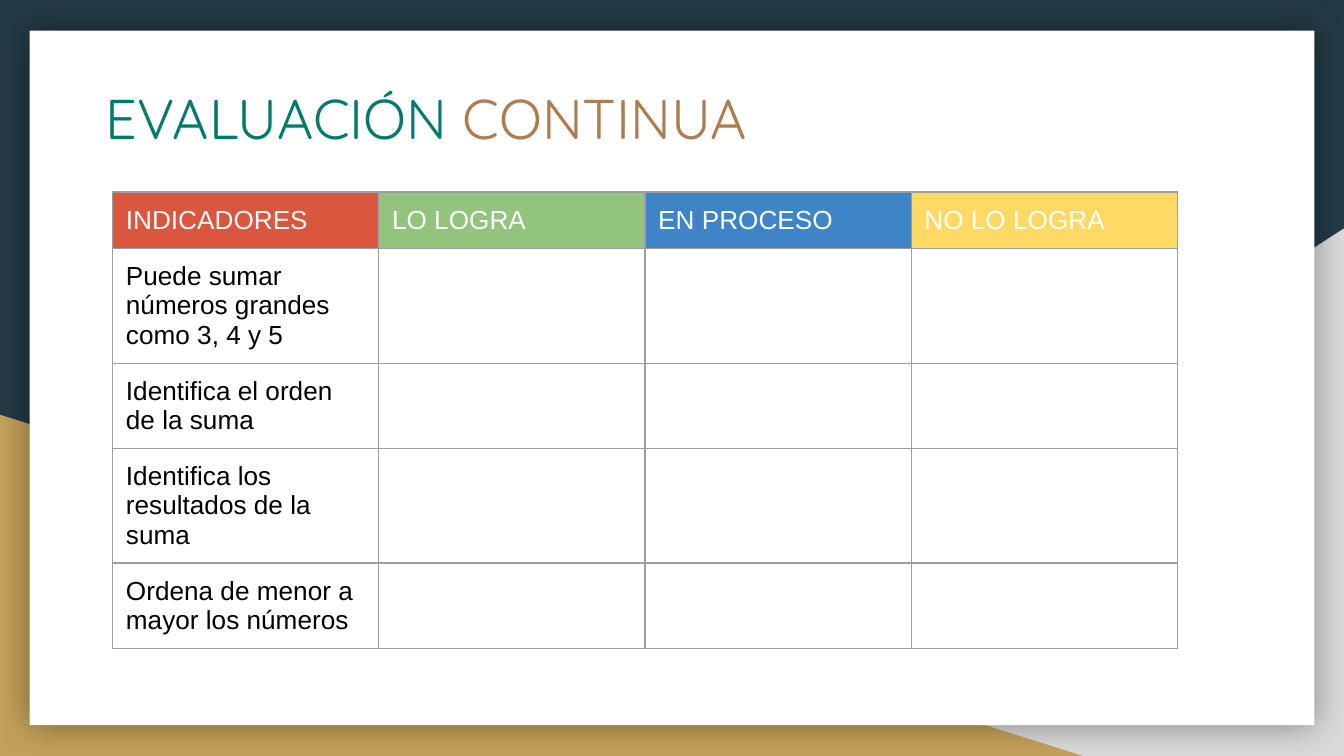
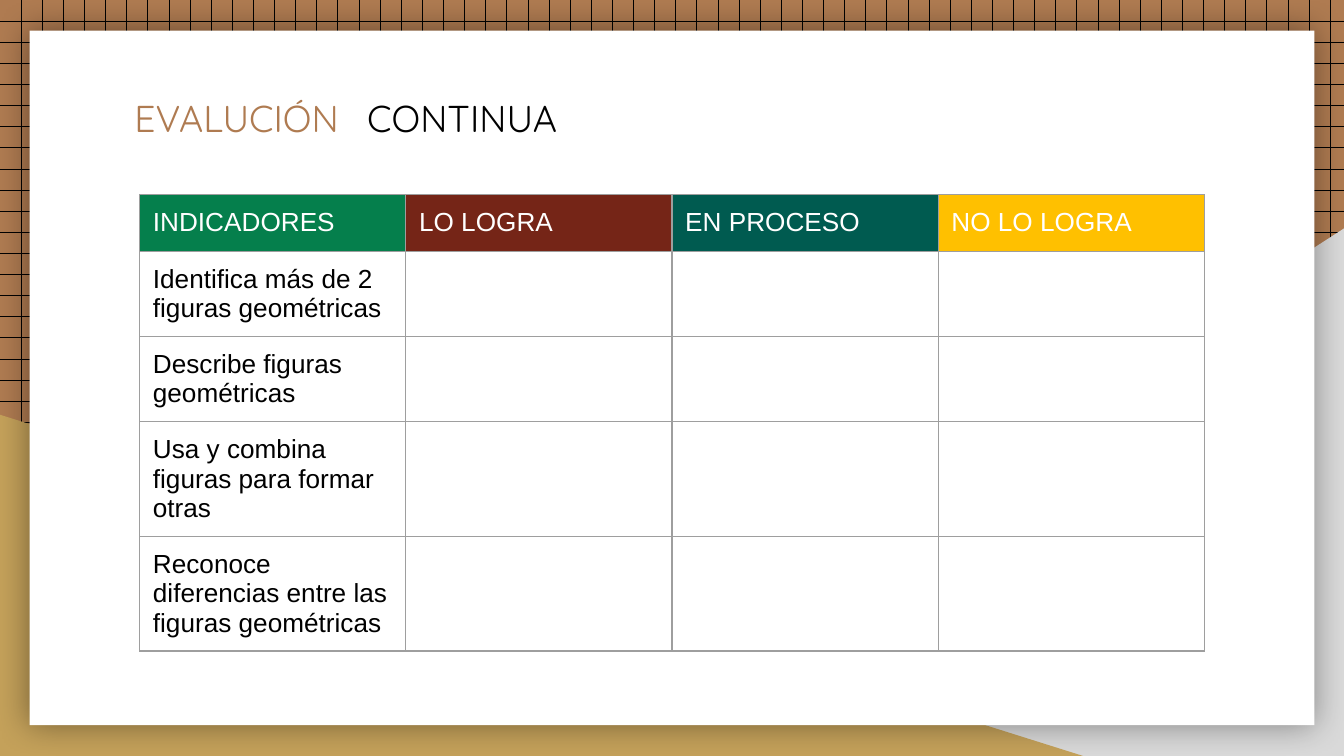
"""Builds two continuous-assessment rubric slides on a shared layered backdrop."""
from dataclasses import dataclass

from lxml.etree import SubElement
from pptx import Presentation
from pptx.dml.color import RGBColor
from pptx.enum.dml import MSO_PATTERN
from pptx.enum.shapes import MSO_SHAPE as Shape
from pptx.enum.text import MSO_ANCHOR as Anchor
from pptx.enum.text import MSO_AUTO_SIZE as AutoSize
from pptx.enum.text import PP_ALIGN as Align
from pptx.oxml import parse_xml
from pptx.oxml.ns import nsdecls, qn
from pptx.util import Cm, Pt


@dataclass(frozen=True)
class Theme:
    night: str = "233A44"
    clay: str = "AF7B51"
    teal: str = "00796B"
    sand: str = "C4A15A"
    mist: str = "D9D9D9"
    paper: str = "FFFFFF"
    ink: str = "000000"
    rule: str = "9E9E9E"
    first_header: tuple = ("D9563F", "93C47D", "3D85C6", "FFD966")
    second_header: tuple = ("057F4C", "752517", "005B50", "FFC000")
    title_font: str = "Quicksand"
    table_font: str = "Arial"
    large_title: int = 30
    small_title: int = 20
    table_size: int = 14
    rule_width: float = 0.75
    inset: float = 0.25


LEVELS = ("INDICADORES", "LO LOGRA", "EN PROCESO", "NO LO LOGRA")


def apply(target, formats):
    for name, value in formats.items():
        setattr(target, name, value)


def paint(fill, color):
    fill.solid()
    fill.fore_color.rgb = RGBColor.from_string(color)


class Deck:
    def __init__(self, theme):
        self.theme = theme
        self.presentation = Presentation()
        apply(self.presentation, {"slide_width": Cm(25.4), "slide_height": Cm(14.29)})
        self.layout = self.presentation.slide_layouts[5]
        self.slide = None
        edge = Cm(theme.inset)
        self.insets = {f"margin_{side}": edge for side in ("left", "top", "right", "bottom")}

    def new_slide(self):
        self.slide = self.presentation.slides.add_slide(self.layout)
        return self.slide.background.fill

    def block(self, kind, box, color):
        block = self.slide.shapes.add_shape(kind, *map(Cm, box))
        block.shadow.inherit = False
        paint(block.fill, color)
        block.line.fill.background()
        return block

    def backdrop(self):
        theme = self.theme
        right_hill = self.block(Shape.RIGHT_TRIANGLE, (9.96, 4.32, 15.44, 9.97), theme.mist)
        right_hill._element.spPr.xfrm.set("flipH", "1")
        left_hill = self.block(Shape.RIGHT_TRIANGLE, (0, 7.84, 20.47, 6.45), theme.sand)
        sheet = self.block(Shape.RECTANGLE, (0.56, 0.58, 24.28, 13.13), theme.paper)
        effects = sheet._element.spPr.find(qn("a:effectLst"))
        effects.append(parse_xml(
            f'<a:outerShdw {nsdecls("a")} blurRad="{Pt(18)}" dist="0" dir="0" '
            f'algn="ctr" rotWithShape="0"><a:srgbClr val="{theme.ink}">'
            '<a:alpha val="40000"/></a:srgbClr></a:outerShdw>'))
        for order, layer in enumerate((right_hill, left_hill, sheet)):
            layer._element.nvSpPr.cNvPr.set("id", str(100 + order))
            self.layout.shapes._spTree.insert(2 + order, layer._element)

    def add_words(self, paragraph, text, font, size, color):
        run = paragraph.add_run()
        run.text = text
        apply(run.font, {"name": font, "size": Pt(size)})
        run.font.color.rgb = RGBColor.from_string(color)

    def title(self, left, top, size, words, tab=None):
        heading = self.slide.shapes.title
        apply(heading, {"left": Cm(left), "top": Cm(top),
                        "width": Cm(20.85), "height": Cm(2.64)})
        apply(heading.text_frame, {**self.insets, "word_wrap": True,
                                   "auto_size": AutoSize.NONE,
                                   "vertical_anchor": Anchor.TOP})
        line = heading.text_frame.paragraphs[0]
        line.alignment = Align.LEFT
        if tab:
            stops = SubElement(line._p.get_or_add_pPr(), qn("a:tabLst"))
            SubElement(stops, qn("a:tab"), pos=str(Cm(tab)), algn="l")
        for text, color in words:
            self.add_words(line, text, self.theme.title_font, size, color)

    def border(self, cell):
        properties = cell._tc.get_or_add_tcPr()
        for order, side in enumerate(("lnL", "lnR", "lnT", "lnB")):
            properties.insert(order, parse_xml(
                f'<a:{side} {nsdecls("a")} w="{Pt(self.theme.rule_width)}"><a:solidFill>'
                f'<a:srgbClr val="{self.theme.rule}"/></a:solidFill></a:{side}>'))

    def rubric(self, left, top, header_colors, indicators):
        theme = self.theme
        rows = [LEVELS, *((indicator,) for indicator in indicators)]
        frame = self.slide.shapes.add_table(
            len(rows), len(LEVELS), Cm(left), Cm(top), Cm(20.12), Cm(9.07))
        grid = frame.table
        apply(grid, {"first_row": False, "horz_banding": False})
        for column in grid.columns:
            column.width = Cm(5.03)
        for row in grid.rows:
            row.height = Cm(1.07)
        frame.height = Cm(9.07)
        for cell in grid.iter_cells():
            apply(cell, self.insets)
            cell.fill.background()
            self.border(cell)
        for row, texts in enumerate(rows):
            for column, text in enumerate(texts):
                color = theme.ink if row else theme.paper
                line = grid.cell(row, column).text_frame.paragraphs[0]
                self.add_words(line, text, theme.table_font, theme.table_size, color)
        for column, color in enumerate(header_colors):
            paint(grid.cell(0, column).fill, color)


def main():
    theme = Theme()
    deck = Deck(theme)

    paint(deck.new_slide(), theme.night)
    deck.backdrop()
    deck.title(1.75, 1.32, theme.large_title,
               [("EVALUACIÓN", theme.teal), (" CONTINUA", theme.clay)])
    deck.rubric(2.13, 3.63, theme.first_header, (
        "Puede sumar números grandes como 3, 4 y 5",
        "Identifica el orden de la suma",
        "Identifica los resultados de la suma",
        "Ordena de menor a mayor los números"))

    grid_paper = deck.new_slide()
    grid_paper.patterned()
    grid_paper.pattern = MSO_PATTERN.DOTTED_GRID
    grid_paper.fore_color.rgb = RGBColor.from_string(theme.ink)
    grid_paper.back_color.rgb = RGBColor.from_string(theme.clay)
    deck.title(2.29, 1.55, theme.small_title,
               [("EVALUCIÓN\t", theme.clay), ("CONTINUA", theme.ink)], tab=4.4)
    deck.rubric(2.64, 3.68, theme.second_header, (
        "Identifica más de 2 figuras geométricas",
        "Describe figuras geométricas",
        "Usa y combina figuras para formar otras",
        "Reconoce diferencias entre las figuras geométricas"))

    deck.presentation.save("out.pptx")


if __name__ == "__main__":
    main()
